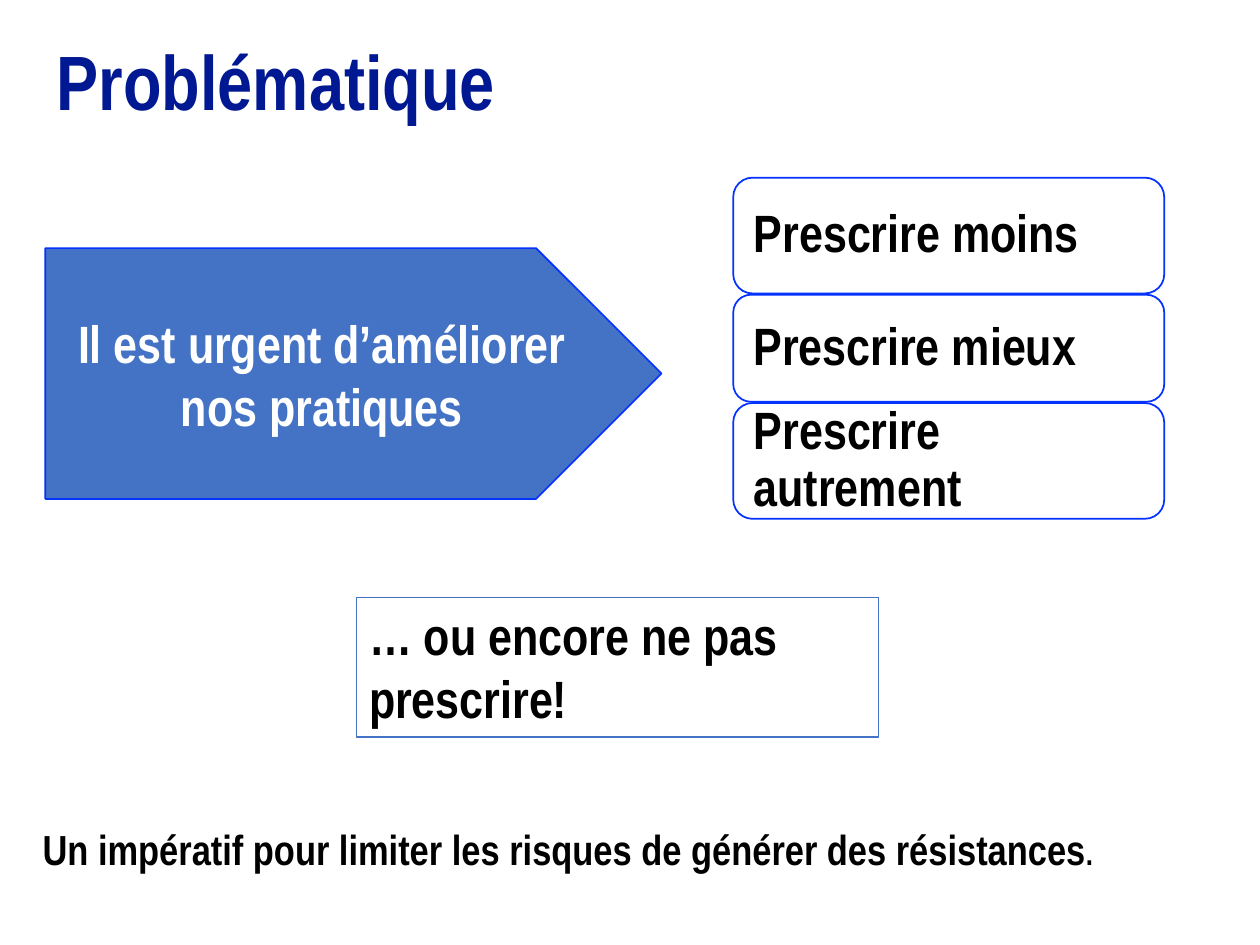
from dataclasses import dataclass
from typing import Optional

from pptx import Presentation
from pptx.dml.color import RGBColor
from pptx.enum.shapes import MSO_SHAPE
from pptx.enum.text import MSO_ANCHOR, MSO_AUTO_SIZE, PP_ALIGN
from pptx.util import Pt

WHITE = RGBColor(0xFF, 0xFF, 0xFF)
BLACK = RGBColor(0x00, 0x00, 0x00)
NAVY = RGBColor(0x01, 0x18, 0x93)
BRIGHT_BLUE = RGBColor(0x04, 0x32, 0xFF)
STEEL_BLUE = RGBColor(0x44, 0x72, 0xC4)
FONT_NAME = "Arial Narrow"


@dataclass(frozen=True)
class Area:
    left: float
    top: float
    width: float
    height: float

    def lengths(self) -> tuple:
        return Pt(self.left), Pt(self.top), Pt(self.width), Pt(self.height)


@dataclass(frozen=True)
class Box:
    text: str
    kind: MSO_SHAPE
    area: Area
    line: RGBColor
    line_width: float = 1
    fill: Optional[RGBColor] = None
    color: RGBColor = BLACK
    align: PP_ALIGN = PP_ALIGN.LEFT
    anchor: MSO_ANCHOR = MSO_ANCHOR.MIDDLE
    line_spacing: float = 1.0
    margin: Optional[float] = None


ACTIONS_LEFT, ACTIONS_TOP, ACTIONS_WIDTH, ACTIONS_GAP = 419, 101.5, 246.3, 0.7
ACTIONS = [
    ("Prescrire moins", 66.2, WHITE),
    ("Prescrire mieux", 61.2, WHITE),
    ("Prescrire autrement", 66.2, None),
]
ARROW = Box(
    "Il est urgent d’améliorer nos pratiques", MSO_SHAPE.PENTAGON,
    Area(25.9, 141.8, 352.1, 143.3), BRIGHT_BLUE,
    fill=STEEL_BLUE, color=WHITE, align=PP_ALIGN.CENTER,
)
ALTERNATIVE = Box(
    "… ou encore ne pas prescrire!", MSO_SHAPE.RECTANGLE,
    Area(203.8, 341.3, 298.1, 79.9), STEEL_BLUE, line_width=0.75,
    anchor=MSO_ANCHOR.TOP,
)


def set_attributes(target, values: dict) -> None:
    for name, value in values.items():
        setattr(target, name, value)


def add_run(paragraph, text: str, size: float, color: RGBColor) -> None:
    run = paragraph.add_run()
    run.text = text
    set_attributes(run.font, {"name": FONT_NAME, "size": Pt(size), "bold": True})
    run.font.color.rgb = color


def add_box(slide, box: Box) -> None:
    shape = slide.shapes.add_shape(box.kind, *box.area.lengths())
    shape.shadow.inherit = False
    if box.fill is None:
        shape.fill.background()
    else:
        shape.fill.solid()
        shape.fill.fore_color.rgb = box.fill
    shape.line.color.rgb = box.line
    shape.line.width = Pt(box.line_width)
    frame = shape.text_frame
    set_attributes(frame, {"word_wrap": True, "vertical_anchor": box.anchor})
    if box.margin is not None:
        sides = ("left", "top", "right", "bottom")
        set_attributes(frame, {f"margin_{side}": Pt(box.margin) for side in sides})
    paragraph = frame.paragraphs[0]
    set_attributes(paragraph, {"alignment": box.align, "line_spacing": box.line_spacing})
    add_run(paragraph, box.text, 30, box.color)


def add_actions(slide) -> None:
    top = ACTIONS_TOP
    for text, height, fill in ACTIONS:
        area = Area(ACTIONS_LEFT, top, ACTIONS_WIDTH, height)
        add_box(slide, Box(text, MSO_SHAPE.ROUNDED_RECTANGLE, area, BRIGHT_BLUE,
                           fill=fill, line_spacing=0.9, margin=8.6))
        top += height + ACTIONS_GAP


def format_title(title) -> None:
    left, top, width, height = Area(25.2, 7.2, 620.6, 83.5).lengths()
    set_attributes(title, {"left": left, "top": top, "width": width, "height": height})
    set_attributes(title.text_frame, {
        "vertical_anchor": MSO_ANCHOR.MIDDLE,
        "auto_size": MSO_AUTO_SIZE.NONE,
    })
    paragraph = title.text_frame.paragraphs[0]
    set_attributes(paragraph, {"alignment": PP_ALIGN.LEFT, "line_spacing": 0.9})
    add_run(paragraph, "Problématique", 44, NAVY)


def add_conclusion(slide) -> None:
    text_box = slide.shapes.add_textbox(*Area(17.3, 467.3, 629.3, 36).lengths())
    set_attributes(text_box.text_frame, {
        "word_wrap": True,
        "auto_size": MSO_AUTO_SIZE.SHAPE_TO_FIT_TEXT,
    })
    paragraph = text_box.text_frame.paragraphs[0]
    add_run(paragraph, "Un impératif pour limiter les risques de générer des résistances",
            24, BLACK)
    add_run(paragraph, ".", 18, BLACK)


def main() -> None:
    presentation = Presentation()
    presentation.slide_width, presentation.slide_height = Pt(720), Pt(540)
    slide = presentation.slides.add_slide(presentation.slide_layouts[5])
    format_title(slide.shapes.title)
    add_actions(slide)
    add_conclusion(slide)
    add_box(slide, ARROW)
    add_box(slide, ALTERNATIVE)
    presentation.save("out.pptx")


if __name__ == "__main__":
    main()
